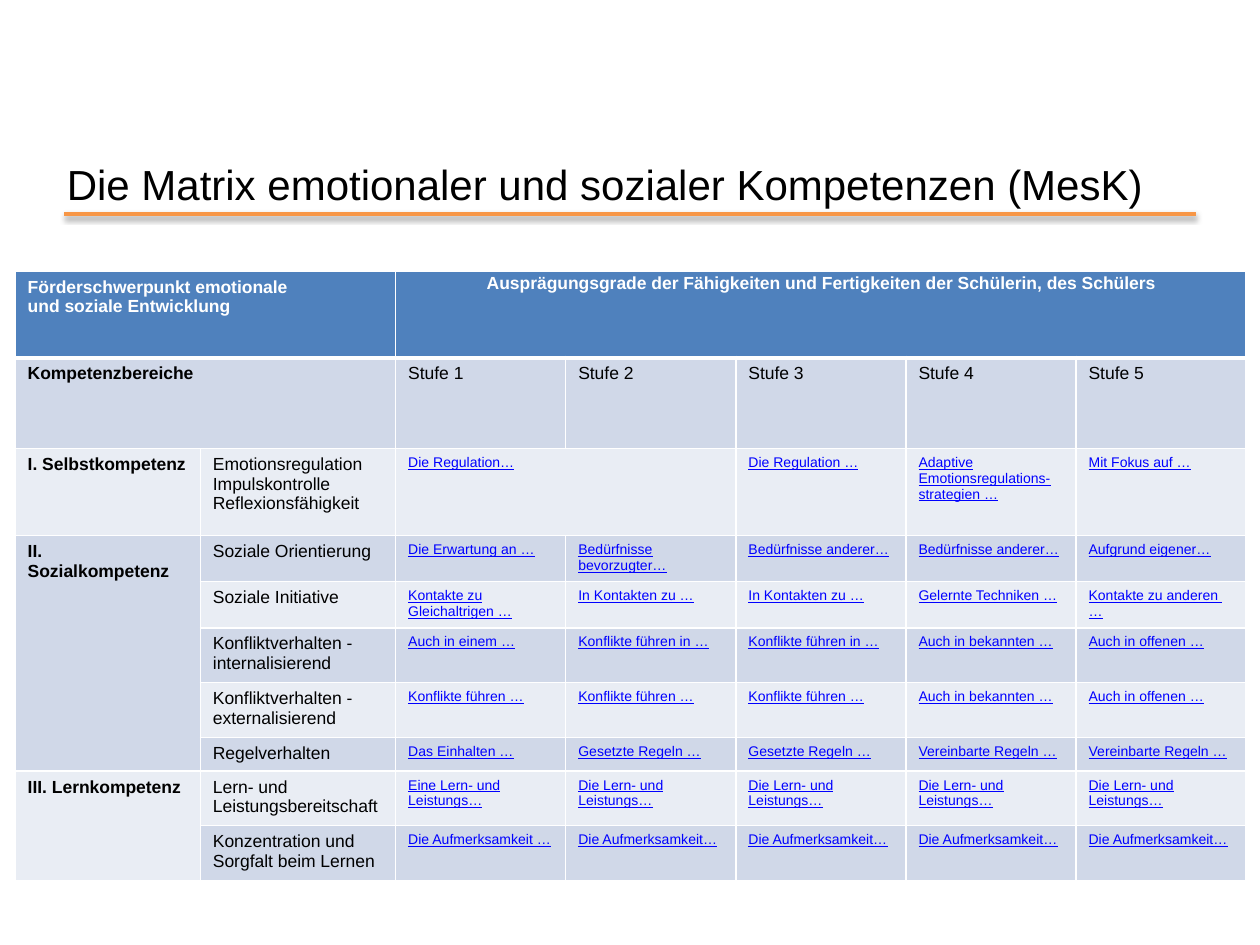
import dataclasses

import lxml.etree
import pptx
import pptx.dml.color
import pptx.enum.shapes
import pptx.enum.text
import pptx.oxml
import pptx.oxml.ns
import pptx.util

SLIDE_WIDTH = pptx.util.Inches(10)
SLIDE_HEIGHT = pptx.util.Inches(7.5)


@dataclasses.dataclass(frozen=True)
class Theme:
    font: str = "Arial"
    text: str = "000000"
    inverse: str = "FFFFFF"
    link: str = "0000FF"
    accent: str = "F79646"
    header: str = "4F81BD"
    bands: tuple = ("E9EDF4", "D0D8E8")
    title_size: int = 24
    title_end_size: int = 28
    label_size: int = 10
    link_size: int = 8
    border: int = 1
    header_border: int = 3


THEME = Theme()

COLUMN_SHARES = [14.7, 15.5] + [13.5] * 5
ROW_SHARES = [9.2, 9.6, 9.2, 4.87, 4.87, 5.77, 5.77, 3.55, 5.77, 5.77]
MERGES = [(0, 0, 0, 1), (0, 2, 0, 6), (1, 0, 1, 1), (2, 2, 2, 3), (3, 0, 7, 0), (8, 0, 9, 0)]

TITLE = "Die Matrix emotionaler und sozialer Kompetenzen (MesK)"
MATRIX = [
    ["Förderschwerpunkt emotionale \nund soziale Entwicklung", "",
     "Ausprägungsgrade der Fähigkeiten und Fertigkeiten der Schülerin, des Schülers", "", "", "", ""],
    ["Kompetenzbereiche", ""] + [f"Stufe {stage}" for stage in range(1, 6)],
    ["I. Selbstkompetenz", "Emotionsregulation Impulskontrolle Reflexionsfähigkeit",
     "Die Regulation…", "", "Die Regulation …",
     "Adaptive Emotionsregulations-strategien …", "Mit Fokus auf …"],
    ["II. Sozialkompetenz", "Soziale Orientierung", "Die Erwartung an …", "Bedürfnisse bevorzugter…",
     "Bedürfnisse anderer…", "Bedürfnisse anderer…", "Aufgrund eigener…"],
    ["", "Soziale Initiative", "Kontakte zu Gleichaltrigen …", "In Kontakten zu …",
     "In Kontakten zu …", "Gelernte Techniken …", "Kontakte zu anderen  …"],
    ["", "Konfliktverhalten - internalisierend", "Auch in einem …", "Konflikte führen in …",
     "Konflikte führen in …", "Auch in bekannten …", "Auch in offenen …"],
    ["", "Konfliktverhalten - externalisierend", "Konflikte führen …", "Konflikte führen …",
     "Konflikte führen …", "Auch in bekannten …", "Auch in offenen …"],
    ["", "Regelverhalten", "Das Einhalten …", "Gesetzte Regeln …",
     "Gesetzte Regeln …", "Vereinbarte Regeln …", "Vereinbarte Regeln …"],
    ["III. Lernkompetenz", "Lern- und Leistungsbereitschaft", "Eine Lern- und Leistungs…"]
    + ["Die Lern- und Leistungs…"] * 4,
    ["", "Konzentration und Sorgfalt beim Lernen", "Die Aufmerksamkeit …"]
    + ["Die Aufmerksamkeit…"] * 4,
]


def across(percent):
    return round(SLIDE_WIDTH * percent / 100)


def down(percent):
    return round(SLIDE_HEIGHT * percent / 100)


def rgb(value):
    return pptx.dml.color.RGBColor.from_string(value)


def add_run(paragraph, words, size, color, bold=False, underline=False):
    run = paragraph.add_run()
    run.text = words
    run.font.name = THEME.font
    run.font.size = pptx.util.Pt(size)
    run.font.color.rgb = rgb(color)
    run.font.bold = bold
    run.font.underline = underline


def add_title(slide):
    title = slide.shapes.title
    title.left, title.top = across(4.3), down(15.33)
    title.width, title.height = across(93.7), down(7.6)
    frame = title.text_frame
    frame.word_wrap = True
    frame.auto_size = pptx.enum.text.MSO_AUTO_SIZE.SHAPE_TO_FIT_TEXT
    frame.vertical_anchor = pptx.enum.text.MSO_ANCHOR.TOP
    heading = frame.paragraphs[0]
    heading.alignment = pptx.enum.text.PP_ALIGN.LEFT
    add_run(heading, TITLE, THEME.title_size, THEME.text)
    add_run(heading, " ", THEME.title_end_size, THEME.text, bold=True)


def add_title_rule(slide):
    rule = slide.shapes.add_connector(
        pptx.enum.shapes.MSO_CONNECTOR.STRAIGHT,
        across(5.1), down(22.67), across(94.9), down(22.67))
    rule.line.color.rgb = rgb(THEME.accent)
    rule.line.width = pptx.util.Pt(2)
    rule._element.spPr.append(pptx.oxml.parse_xml(
        f'<a:effectLst {pptx.oxml.ns.nsdecls("a")}>'
        f'<a:outerShdw blurRad="{pptx.util.Pt(3.1)}" dist="{pptx.util.Pt(1.6)}" '
        'dir="5400000" rotWithShape="0">'
        f'<a:srgbClr val="{THEME.text}"><a:alpha val="38000"/></a:srgbClr>'
        '</a:outerShdw></a:effectLst>'))


def add_border(cell, side, points):
    properties = cell._tc.get_or_add_tcPr()
    edge = lxml.etree.SubElement(
        properties, pptx.oxml.ns.qn(f"a:ln{side}"), w=str(pptx.util.Pt(points)))
    fill = lxml.etree.SubElement(edge, pptx.oxml.ns.qn("a:solidFill"))
    lxml.etree.SubElement(fill, pptx.oxml.ns.qn("a:srgbClr"), val=THEME.inverse)


def style_cell(cell, row):
    heavy_side = {0: "B", 1: "T"}.get(row)
    for side in "LRTB":
        add_border(cell, side, THEME.header_border if side == heavy_side else THEME.border)
    cell.fill.solid()
    cell.fill.fore_color.rgb = rgb(THEME.header if row == 0 else THEME.bands[row % 2])


def write_cell(cell, words, row, column):
    is_link = row >= 2 and column >= 2
    size = THEME.link_size if is_link else THEME.label_size
    color = THEME.inverse if row == 0 else THEME.link if is_link else THEME.text
    paragraph = cell.text_frame.paragraphs[0]
    for index, line in enumerate(words.split("\n")):
        if index:
            paragraph.add_line_break()
        add_run(paragraph, line, size, color, bold=row == 0 or column == 0, underline=is_link)


def center_stage_header(cell):
    cell.margin_left = cell.margin_right = cell.margin_top = cell.margin_bottom = 0
    heading = cell.text_frame.paragraphs[0]
    heading.alignment = pptx.enum.text.PP_ALIGN.CENTER
    heading.line_spacing = 1.15


def add_matrix(slide):
    matrix = slide.shapes.add_table(
        len(ROW_SHARES), len(COLUMN_SHARES), across(1.2), down(28.67),
        across(sum(COLUMN_SHARES)), down(sum(ROW_SHARES))).table
    for column, share in zip(matrix.columns, COLUMN_SHARES):
        column.width = across(share)
    for row, share in zip(matrix.rows, ROW_SHARES):
        row.height = down(share)
    for top, left, bottom, right in MERGES:
        matrix.cell(top, left).merge(matrix.cell(bottom, right))
    for row, entries in enumerate(MATRIX):
        for column, words in enumerate(entries):
            cell = matrix.cell(row, column)
            style_cell(cell, row)
            if words:
                write_cell(cell, words, row, column)
    center_stage_header(matrix.cell(0, 2))


def main():
    presentation = pptx.Presentation()
    presentation.slide_width = SLIDE_WIDTH
    presentation.slide_height = SLIDE_HEIGHT
    slide = presentation.slides.add_slide(presentation.slide_layouts[5])
    add_title_rule(slide)
    add_title(slide)
    add_matrix(slide)
    presentation.save("out.pptx")


if __name__ == "__main__":
    main()
